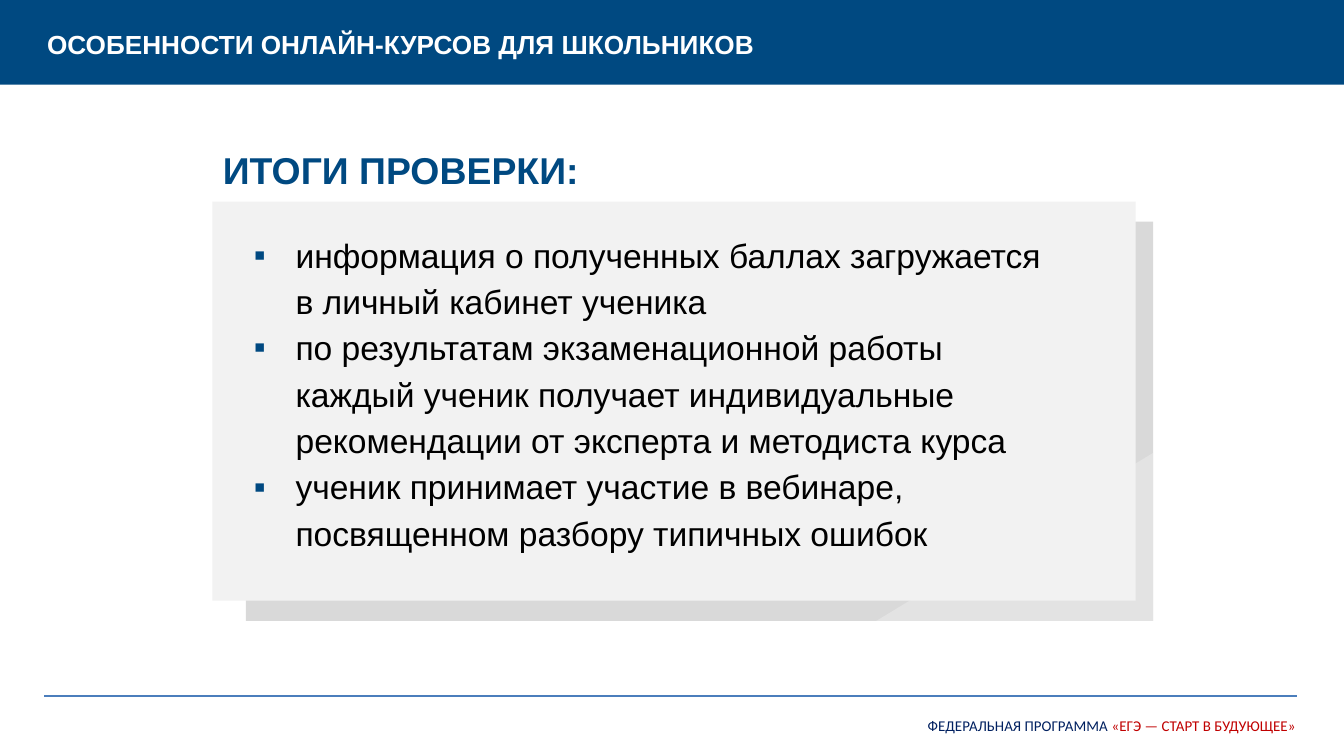
from lxml.etree import SubElement
from pptx import Presentation
from pptx.dml.color import RGBColor
from pptx.enum.shapes import MSO_CONNECTOR, MSO_SHAPE
from pptx.enum.text import MSO_ANCHOR, MSO_AUTO_SIZE, PP_ALIGN
from pptx.oxml.ns import qn
from pptx.util import Inches, Pt


class Theme:
    blue = "004981"
    navy = "002060"
    red = "C00000"
    rule = "4B7EBC"
    white = "FFFFFF"
    black = "000000"
    panel = "F2F2F2"
    shade = "D9D9D9"
    font = "Arial"
    small_font = "Calibri"
    title = 14
    head = 20
    body = 18
    small = 8


def add_run(para, text, size, color, bold=False, font=Theme.font):
    run = para.add_run()
    run.text = text
    run.font.name = font
    run.font.size = Pt(size)
    run.font.bold = bold
    run.font.color.rgb = RGBColor.from_string(color)


def add_block(kind, left, top, width, height, color):
    """Add a preset shape with a plain fill, no line and no shadow."""
    shape = slide.shapes.add_shape(
        kind, Inches(left), Inches(top), Inches(width), Inches(height))
    shape.shadow.inherit = False
    shape.fill.solid()
    shape.fill.fore_color.rgb = RGBColor.from_string(color)
    shape.line.fill.background()
    return shape


prs = Presentation()
prs.slide_width = Inches(10)
prs.slide_height = Inches(10 * 9 / 16)
slide = prs.slides.add_slide(prs.slide_layouts[5])

# Footer
foot = slide.shapes.add_textbox(
    Inches(6.07), Inches(5.28), Inches(3.67), Inches(0.24))
foot.text_frame.word_wrap = True
para = foot.text_frame.paragraphs[0]
para.alignment = PP_ALIGN.RIGHT
for text, color in (("ФЕДЕРАЛЬНАЯ ПРОГРАММА ", Theme.navy),
                    ("«ЕГЭ — СТАРТ В БУДУЮЩЕЕ»", Theme.red)):
    add_run(para, text, Theme.small, color, font=Theme.small_font)

rule = slide.shapes.add_connector(
    MSO_CONNECTOR.STRAIGHT,
    Inches(0.33), Inches(5.18), Inches(9.65), Inches(5.18))
rule.line.color.rgb = RGBColor.from_string(Theme.rule)
rule.line.width = Pt(0.75)
SubElement(rule._element.spPr, qn("a:effectLst"))

# Title on its band
add_block(MSO_SHAPE.RECTANGLE, 0, 0, 10, 0.63, Theme.blue)
title = slide.shapes.title
title.left, title.top = Inches(0.33), Inches(0.21)
title.width, title.height = Inches(8.67), Inches(0.24)
slide.shapes._spTree.append(title._element)  # bring in front of the band
frame = title.text_frame
frame.word_wrap = True
frame.auto_size = MSO_AUTO_SIZE.NONE
frame.vertical_anchor = MSO_ANCHOR.TOP
frame.margin_left = Inches(0.02)
frame.margin_top = frame.margin_right = frame.margin_bottom = 0
para = frame.paragraphs[0]
para.alignment = PP_ALIGN.LEFT
add_run(para, "ОСОБЕННОСТИ ОНЛАЙН-КУРСОВ ДЛЯ ШКОЛЬНИКОВ",
        Theme.title, Theme.white, bold=True)

# Heading
head = slide.shapes.add_textbox(
    Inches(1.56), Inches(1.22), Inches(8.08), Inches(0.28))
head.text_frame.word_wrap = True
para = head.text_frame.paragraphs[0]
para.line_spacing = Pt(11.2)
add_run(para, "ИТОГИ ПРОВЕРКИ:", Theme.head, Theme.blue, bold=True)

# Panel with its backing
add_block(MSO_SHAPE.RECTANGLE, 1.83, 1.65, 6.75, 2.97, Theme.shade)
panel = add_block(MSO_SHAPE.RECTANGLE, 1.58, 1.5, 6.87, 2.97, Theme.panel)
frame = panel.text_frame
frame.word_wrap = True
frame.vertical_anchor = MSO_ANCHOR.TOP
frame.margin_left, frame.margin_top = Inches(0.31), Inches(0.2)
frame.margin_right, frame.margin_bottom = Inches(0.59), Inches(0.35)

points = (
    ("информация о полученных баллах загружается ",
     "в личный кабинет ученика"),
    ("по результатам экзаменационной работы каждый ученик получает "
     "индивидуальные рекомендации от эксперта и методиста курса",),
    ("ученик принимает участие в вебинаре, "
     "посвященном разбору типичных ошибок",),
)
for i, lines in enumerate(points):
    para = frame.add_paragraph() if i else frame.paragraphs[0]
    para.alignment = PP_ALIGN.LEFT
    para.line_spacing = 1.15
    props = para._p.get_or_add_pPr()
    props.set("marL", str(Inches(0.31)))
    props.set("indent", str(-Inches(0.31)))
    tint = SubElement(props, qn("a:buClr"))
    SubElement(tint, qn("a:srgbClr"), val=Theme.blue)
    SubElement(props, qn("a:buFont"), typeface=Theme.font)
    SubElement(props, qn("a:buChar"), char="▪")
    for j, line in enumerate(lines):
        if j:
            para.add_line_break()
        add_run(para, line, Theme.body, Theme.black)

# Pale corner
corner = add_block(MSO_SHAPE.RIGHT_TRIANGLE, 6.52, 3.37, 2.06, 1.25, Theme.panel)
corner._element.spPr.get_or_add_xfrm().set("flipH", "1")
tint = corner._element.spPr.find(qn("a:solidFill")).find(qn("a:srgbClr"))
SubElement(tint, qn("a:alpha"), val="40000")

prs.save("out.pptx")
